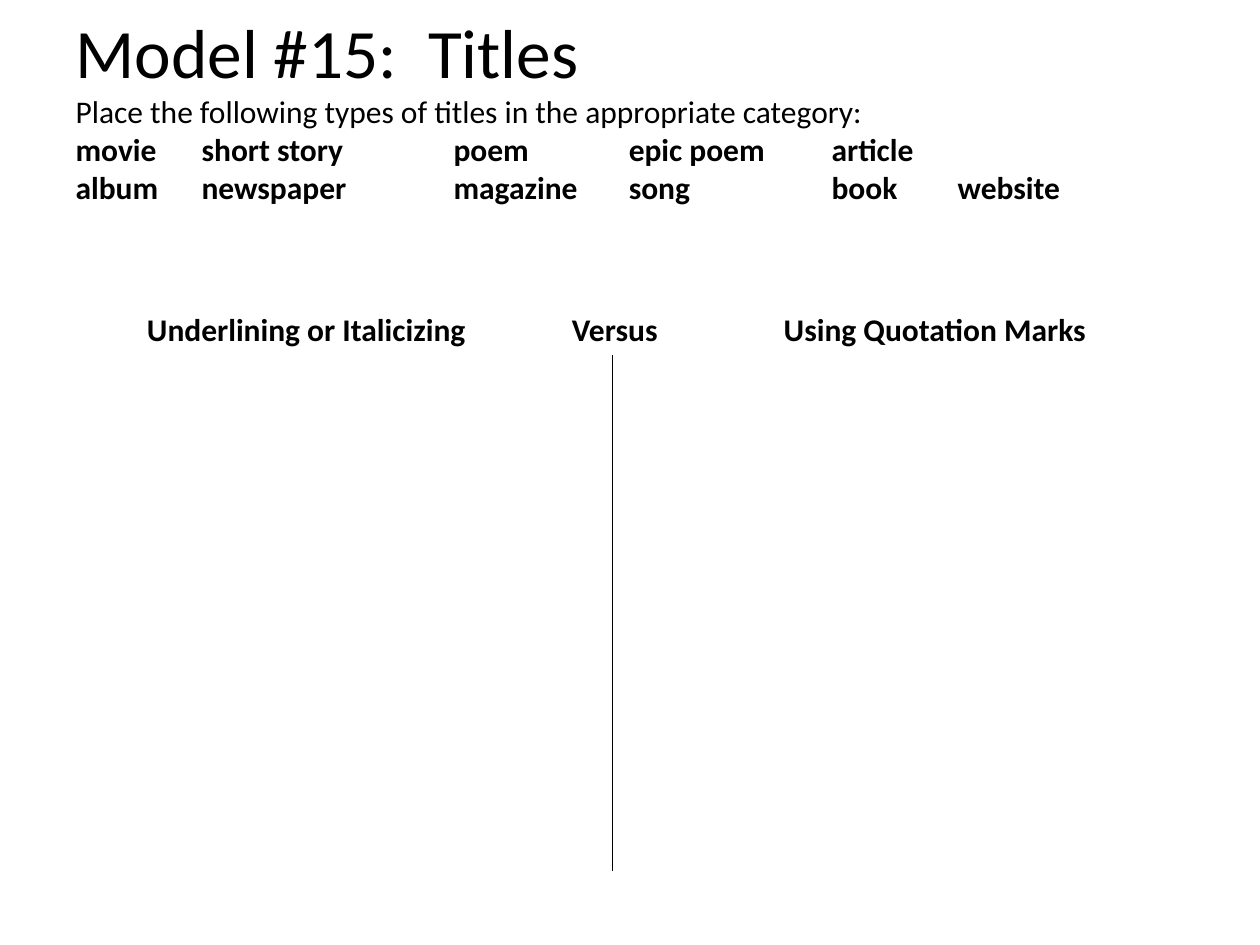
from lxml.etree import SubElement
from pptx import Presentation
from pptx.dml.color import RGBColor
from pptx.enum.text import MSO_ANCHOR, MSO_AUTO_SIZE, PP_ALIGN
from pptx.oxml.ns import qn
from pptx.util import Inches, Pt

BLACK = RGBColor(0, 0, 0)
WHITE = RGBColor(255, 255, 255)
FONT = "Calibri"

HEADING = "Model #15:  Titles"
INSTRUCTION = "Place the following types of titles in the appropriate category:"
TITLE_TYPES = [
    ["movie", "short story", "poem", "epic poem", "article"],
    ["album", "newspaper", "magazine", "song", "book", "website"],
]
TAB_STOPS = [1, 3, 4.39, 6, 7]

CATEGORIES = {0: "Underlining or Italicizing ", 1: "Versus", 3: "Using Quotation Marks"}
COLUMN_WIDTHS = [3.92, 0.44, 0.48, 4.16]
ROW_HEIGHTS = [0.4, 4.08]
LEFT, WIDTH = 0.5, 9
TITLE_TOP, TITLE_HEIGHT = 0.3, 1.7
TABLE_TOP = 2.42


def add_text(paragraph, text, size=18, bold=False):
    run = paragraph.add_run()
    run.text = text
    font = run.font
    font.name, font.size, font.bold = FONT, Pt(size), bold
    font.color.rgb = BLACK


def set_tab_stops(paragraph, stops):
    tab_list = SubElement(paragraph._p.get_or_add_pPr(), qn("a:tabLst"))
    for stop in stops:
        SubElement(tab_list, qn("a:tab"), pos=str(Inches(stop)), algn="l")


def set_borders(cell, **colors):
    """Draw all four edges, white unless a side (L, R, T, B) names a colour."""
    properties = cell._tc.get_or_add_tcPr()
    for index, side in enumerate("LRTB"):
        line = SubElement(properties, qn(f"a:ln{side}"), w=str(Pt(1)))
        fill = SubElement(line, qn("a:solidFill"))
        SubElement(fill, qn("a:srgbClr"), val=str(colors.get(side, WHITE)))
        properties.insert(index, line)


def fill_title(title):
    title.left, title.top = Inches(LEFT), Inches(TITLE_TOP)
    title.width, title.height = Inches(WIDTH), Inches(TITLE_HEIGHT)
    frame = title.text_frame
    frame.word_wrap = True
    frame.auto_size = MSO_AUTO_SIZE.NONE
    frame.vertical_anchor = MSO_ANCHOR.MIDDLE
    frame.margin_top, frame.margin_bottom = 0, Inches(0.6)
    paragraph = frame.paragraphs[0]
    paragraph.alignment = PP_ALIGN.LEFT
    set_tab_stops(paragraph, TAB_STOPS)
    add_text(paragraph, HEADING, size=39.6)
    paragraph.add_line_break()
    add_text(paragraph, INSTRUCTION)
    for words in TITLE_TYPES:
        paragraph.add_line_break()
        add_text(paragraph, "\t".join(words), bold=True)


def add_category_table(slide):
    table = slide.shapes.add_table(
        len(ROW_HEIGHTS), len(COLUMN_WIDTHS), Inches(LEFT), Inches(TABLE_TOP),
        Inches(WIDTH), Inches(sum(ROW_HEIGHTS))).table
    table.first_row = table.horz_banding = False
    for column, width in zip(table.columns, COLUMN_WIDTHS):
        column.width = Inches(width)
    for row, height in zip(table.rows, ROW_HEIGHTS):
        row.height = Inches(height)
    for cell in table.iter_cells():
        cell.fill.background()

    for row, first in [(0, 1), (1, 0), (1, 2)]:
        table.cell(row, first).merge(table.cell(row, first + 1))
    for column in range(len(COLUMN_WIDTHS)):
        set_borders(table.cell(0, column))
        divider_side = {1: "R", 2: "L"}.get(column)
        set_borders(table.cell(1, column), **({divider_side: BLACK} if divider_side else {}))
    set_divider = {0: "a:lnR"}
    for column, tag in set_divider.items():
        color = table.cell(1, column)._tc.tcPr.find(qn(tag)).find(".//" + qn("a:srgbClr"))
        color.set("val", str(BLACK))

    for column, text in CATEGORIES.items():
        paragraph = table.cell(0, column).text_frame.paragraphs[0]
        paragraph.alignment = PP_ALIGN.CENTER
        add_text(paragraph, text, bold=True)


def main():
    presentation = Presentation()
    presentation.slide_width, presentation.slide_height = Inches(10), Inches(7.5)
    slide = presentation.slides.add_slide(presentation.slide_layouts[5])
    fill_title(slide.shapes.title)
    add_category_table(slide)
    presentation.save("out.pptx")


if __name__ == "__main__":
    main()
